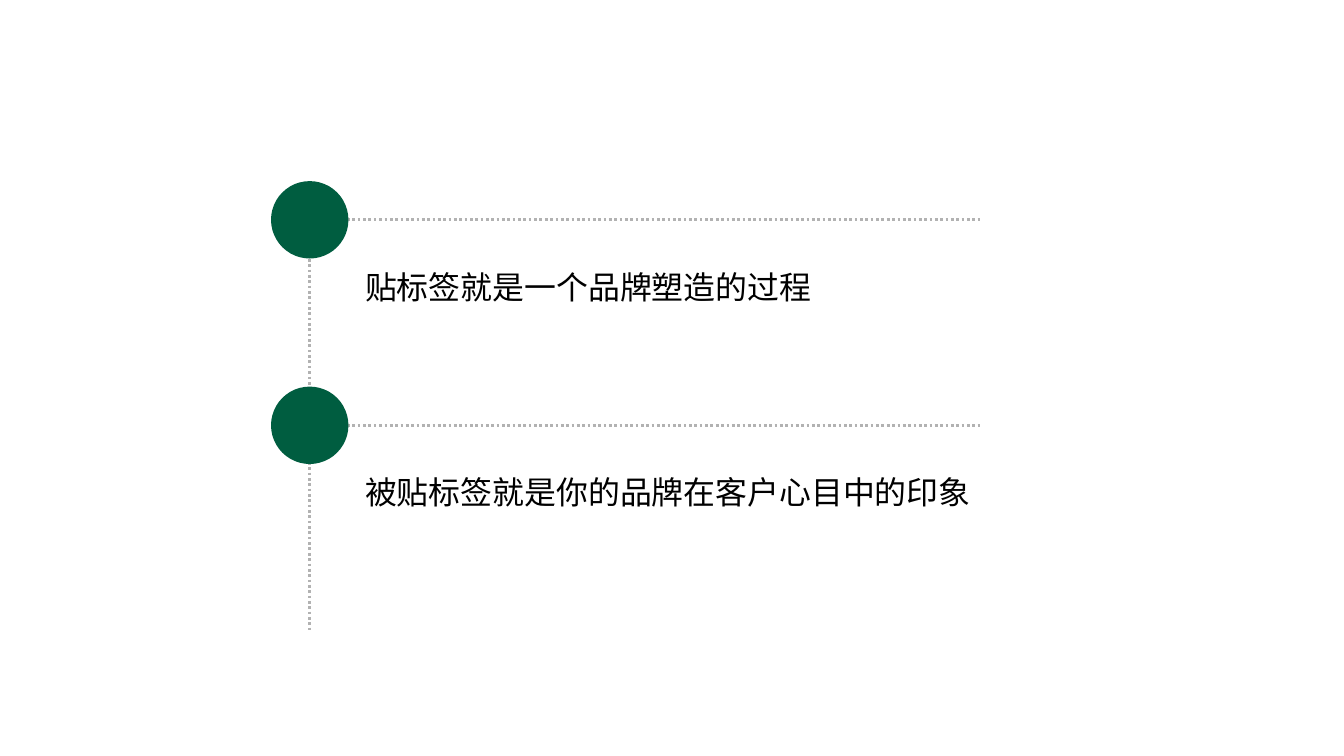
import pptx
import pptx.util
import pptx.dml.color
import pptx.enum.dml
import pptx.enum.shapes
import pptx.enum.text
from lxml import etree
from pptx.util import Inches

GREEN = pptx.dml.color.RGBColor(0x00, 0x5D, 0x40)
GREY = pptx.dml.color.RGBColor(0xB2, 0xB2, 0xB2)
BLACK = pptx.dml.color.RGBColor(0x00, 0x00, 0x00)

AXIS_X = 3.24
RULE_END = 10.25
FIRST_Y = 2.3
STEP = 2.15
POINTS = ["贴标签就是一个品牌塑造的过程", "被贴标签就是你的品牌在客户心目中的印象"]


class Timeline:
    """Style and drawing methods for the current slide."""

    font_name = "Calibri"
    font_size = pptx.util.Pt(24)
    line_width = pptx.util.Pt(2)
    dot_size = 0.81

    def __init__(self, page):
        self.page = page

    def dotted_line(self, x1, y1, x2, y2):
        line = self.page.shapes.add_connector(
            pptx.enum.shapes.MSO_CONNECTOR.STRAIGHT,
            Inches(x1), Inches(y1), Inches(x2), Inches(y2))
        line.line.color.rgb = GREY
        line.line.width = self.line_width
        line.line.dash_style = pptx.enum.dml.MSO_LINE.ROUND_DOT
        properties = line._element.spPr
        etree.SubElement(properties, pptx.oxml.ns.qn("a:effectLst"))

    def dot(self, x, y):
        size = self.dot_size
        dot = self.page.shapes.add_shape(
            pptx.enum.shapes.MSO_SHAPE.OVAL,
            Inches(x - size / 2), Inches(y - size / 2), Inches(size), Inches(size))
        dot.shadow.inherit = False
        dot.fill.solid()
        dot.fill.fore_color.rgb = GREEN
        dot.line.fill.background()

    def label(self, text, left, top, width, height):
        box = self.page.shapes.add_textbox(
            Inches(left), Inches(top), Inches(width), Inches(height))
        frame = box.text_frame
        frame.word_wrap = True
        frame.vertical_anchor = pptx.enum.text.MSO_ANCHOR.MIDDLE
        frame.margin_left = frame.margin_right = 0
        frame.margin_top = frame.margin_bottom = 0
        para = frame.paragraphs[0]
        para.text = text
        para.font.name = self.font_name
        para.font.size = self.font_size
        para.font.color.rgb = BLACK


def main():
    deck = pptx.Presentation()
    deck.slide_width = Inches(14.06)
    deck.slide_height = Inches(7.91)
    timeline = Timeline(deck.slides.add_slide(deck.slide_layouts[6]))

    # Vertical axis
    timeline.dotted_line(AXIS_X, 2.43, AXIS_X, 6.61)

    # One rule, dot and label per point
    for index, text in enumerate(POINTS):
        y = FIRST_Y + index * STEP
        timeline.dotted_line(AXIS_X, y, RULE_END, y)
        timeline.dot(AXIS_X, y)
        timeline.label(text, 3.82, y + 0.02, 6.43, 1.36)

    deck.save("out.pptx")


if __name__ == "__main__":
    main()
